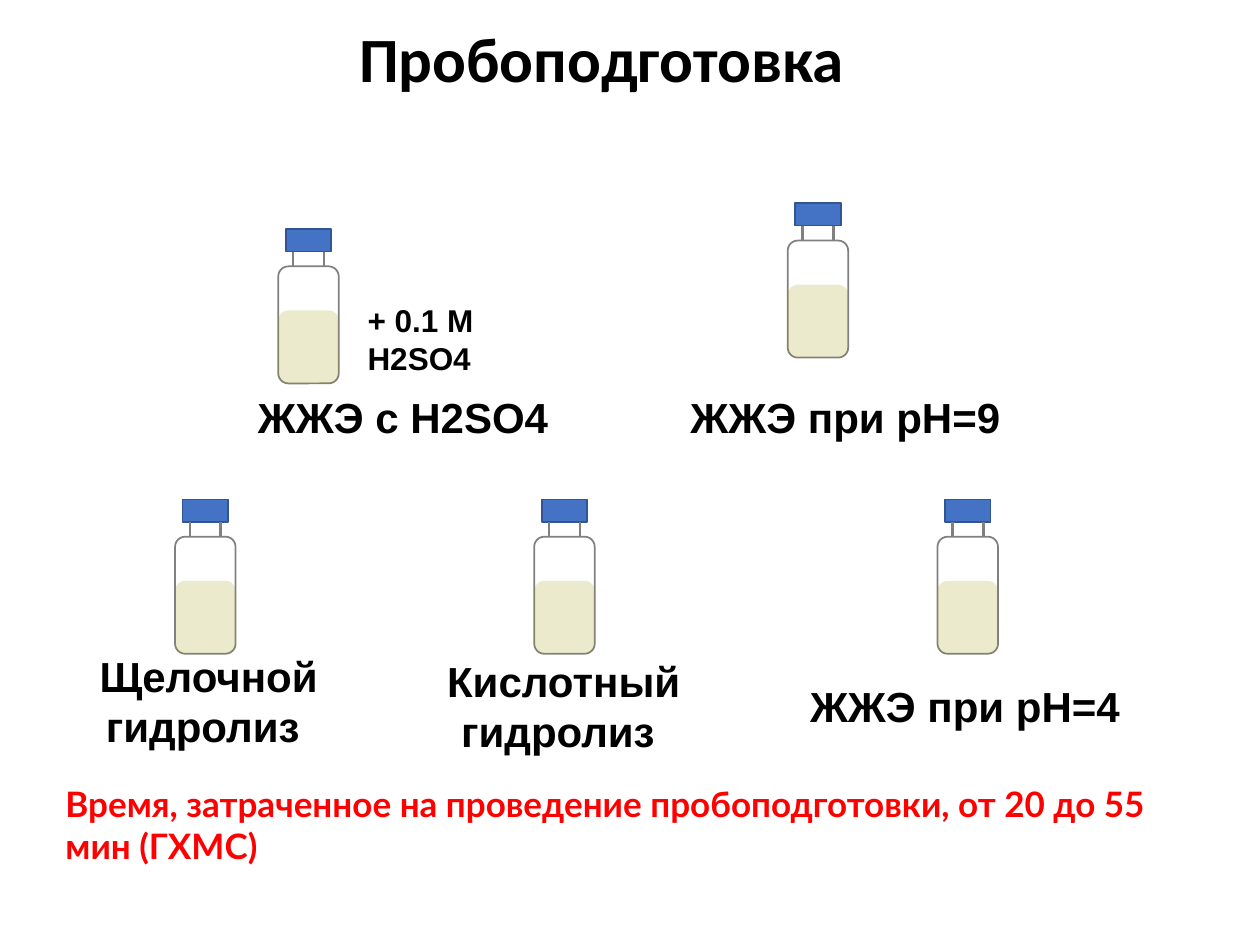
import pptx
import pptx.dml.color
import pptx.enum.shapes
import pptx.enum.text
import pptx.oxml
import pptx.oxml.ns
import pptx.util

Cm = pptx.util.Cm
Pt = pptx.util.Pt
RGBColor = pptx.dml.color.RGBColor
Shape = pptx.enum.shapes.MSO_SHAPE
Align = pptx.enum.text.PP_ALIGN

BLACK = RGBColor(0x00, 0x00, 0x00)
RED = RGBColor(0xFF, 0x00, 0x00)
GLASS = RGBColor(0x80, 0x80, 0x80)
CAP_FILL = RGBColor(0x44, 0x72, 0xC4)
CAP_LINE = RGBColor(0x32, 0x54, 0x91)
LIQUID = RGBColor(0x9E, 0x9A, 0x00)
LIQUID_OPACITY = 20  # percent

# Vial positions: left, top in cm
VIALS = [(5.61, 4.62), (15.88, 4.1), (3.53, 10.07), (10.77, 10.07), (18.9, 10.07)]

# Labels: text, box in cm, wraps and is centred
LABELS = [
    ("ЖЖЭ с Н2SO4", (4.95, 7.77, 6.43, 1.27), False),
    ("ЖЖЭ при рН=9", (13.67, 7.77, 6.83, 1.27), False),
    ("Щелочной гидролиз ", (0.61, 12.98, 7.19, 2.31), True),
    ("Кислотный гидролиз ", (7.77, 13.08, 7.19, 2.31), True),
    ("ЖЖЭ при рН=4", (16.08, 13.59, 6.83, 1.27), False),
]


def write_text(shape, text, size, font_name, color=BLACK, alignment=Align.LEFT, wrap=True):
    frame = shape.text_frame
    frame.word_wrap = wrap
    frame.auto_size = pptx.enum.text.MSO_AUTO_SIZE.SHAPE_TO_FIT_TEXT
    frame.vertical_anchor = pptx.enum.text.MSO_ANCHOR.TOP
    paragraph = frame.paragraphs[0]
    paragraph.alignment = alignment
    run = paragraph.add_run()
    run.text = text
    run.font.size = Pt(size)
    run.font.name = font_name
    run.font.bold = True
    run.font.color.rgb = color
    return paragraph


def add_title(slide, box):
    title = slide.shapes.title
    title.left, title.top, title.width, title.height = map(Cm, box)
    paragraph = write_text(title, "Пробоподготовка", 36, "Calibri", alignment=Align.CENTER)
    paragraph.line_spacing = 0.9


def add_text(slide, box, text, size, font_name, **style):
    text_box = slide.shapes.add_textbox(*map(Cm, box))
    write_text(text_box, text, size, font_name, **style)


def add_part(group, kind, box, fill=None, line=None):
    shape = group.shapes.add_shape(kind, *map(Cm, box))
    shape.shadow.inherit = False
    if fill is None:
        shape.fill.background()
    else:
        shape.fill.solid()
        shape.fill.fore_color.rgb = fill
    if line is None:
        shape.line.fill.background()
    else:
        shape.line.color.rgb = line
        shape.line.width = Pt(1)
    return shape


def set_opacity(shape, percent):
    color = shape.fill._xPr.find(".//" + pptx.oxml.ns.qn("a:srgbClr"))
    alpha = pptx.oxml.parse_xml(
        f'<a:alpha {pptx.oxml.ns.nsdecls("a")} val="{percent * 1000}"/>')
    color.append(alpha)


def add_vial(slide, left, top):
    group = slide.shapes.add_group_shape()
    # Glass body and cap
    add_part(group, Shape.ROUNDED_RECTANGLE, (left, top + 0.75, 1.22, 2.36), line=GLASS)
    add_part(group, Shape.RECTANGLE, (left + 0.15, top, 0.92, 0.45), CAP_FILL, CAP_LINE)
    # Neck
    for offset in (0.3, 0.92):
        x = Cm(left + offset)
        neck = group.shapes.add_connector(
            pptx.enum.shapes.MSO_CONNECTOR.STRAIGHT, x, Cm(top + 0.45), x, Cm(top + 0.75))
        neck.line.color.rgb = GLASS
        neck.line.width = Pt(1.5)
        neck._element.spPr.append(
            pptx.oxml.parse_xml(f'<a:effectLst {pptx.oxml.ns.nsdecls("a")}/>'))
    # Liquid
    liquid = add_part(group, Shape.ROUNDED_RECTANGLE, (left, top + 1.64, 1.22, 1.47), LIQUID)
    set_opacity(liquid, LIQUID_OPACITY)


def main():
    presentation = pptx.Presentation()
    presentation.slide_width = Cm(25.4)
    presentation.slide_height = Cm(19.05)
    slide = presentation.slides.add_slide(presentation.slide_layouts[5])

    add_title(slide, (5.36, 0.43, 13.54, 1.65))
    for left, top in VIALS:
        add_vial(slide, left, top)
    for text, box, wrap in LABELS:
        alignment = Align.CENTER if wrap else Align.LEFT
        add_text(slide, box, text, 24, "Arial", alignment=alignment, wrap=wrap)

    # Added reagent and the note on time
    add_text(slide, (7.16, 5.94, 3, 1.8), "+ 0.1 М Н2SO4", 18, "Arial")
    add_text(slide, (1.07, 15.65, 23.5, 1.96),
             "Время, затраченное на проведение пробоподготовки, от 20 до 55 мин (ГХМС)",
             20, "Lato", color=RED)

    presentation.save("out.pptx")


if __name__ == "__main__":
    main()
